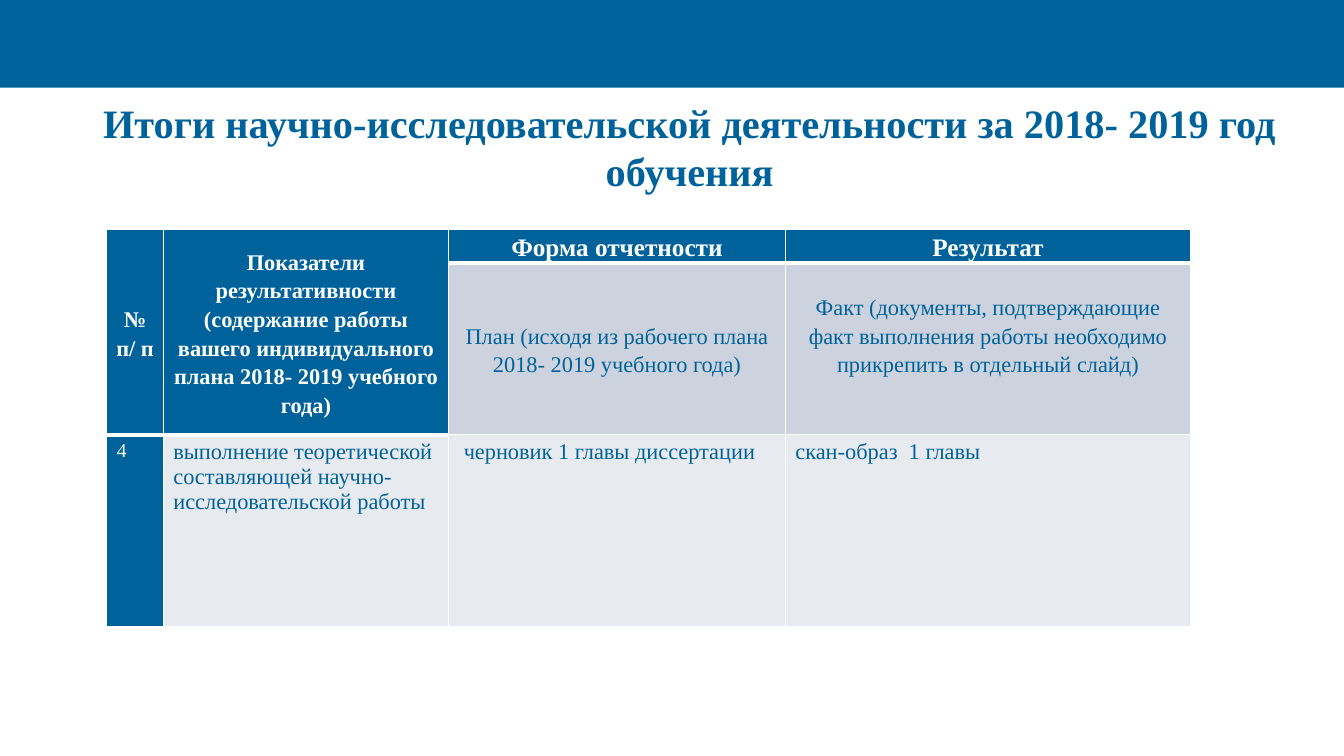
from lxml import etree
from pptx import Presentation
from pptx.dml.color import RGBColor
from pptx.enum.shapes import MSO_SHAPE
from pptx.enum.text import MSO_ANCHOR, PP_ALIGN
from pptx.oxml.ns import qn
from pptx.util import Inches, Pt

RECTANGLE = MSO_SHAPE.RECTANGLE
MIDDLE, TOP = MSO_ANCHOR.MIDDLE, MSO_ANCHOR.TOP
CENTER, LEFT = PP_ALIGN.CENTER, PP_ALIGN.LEFT

BLUE = RGBColor(0x00, 0x62, 0x9B)
WHITE = RGBColor(0xFF, 0xFF, 0xFF)
GREY = RGBColor(0xCC, 0xD3, 0xDE)
LIGHT_GREY = RGBColor(0xE7, 0xEA, 0xEF)

COLUMN_WIDTHS = (0.56, 2.83, 3.34, 4.02)
ROW_HEIGHTS = (0.33, 1.7, 1.9)
HEADER = {"fill": BLUE, "color": WHITE, "bold": True, "align": CENTER,
          "line_spacing": 1.15, "margins": (0.07, 0, 0.07, 0)}
SIDE_HEADER = {**HEADER, "anchor": MIDDLE}
SUBHEADER = {**SIDE_HEADER, "fill": GREY, "color": BLUE, "bold": False}
BODY = {"fill": LIGHT_GREY}

CELLS = (
    (0, 0, "№ п/ п", SIDE_HEADER),
    (0, 1, "Показатели результативности\n(содержание работы вашего "
           "индивидуального плана 2018- 2019 учебного года)", SIDE_HEADER),
    (0, 2, "Форма отчетности", {**HEADER, "size": 18}),
    (0, 3, "Результат", {**HEADER, "size": 18}),
    (1, 2, "План (исходя из рабочего плана 2018- 2019 учебного года)", SUBHEADER),
    (1, 3, "Факт (документы, подтверждающие факт выполнения работы необходимо "
           "прикрепить в отдельный слайд)",
     {**SUBHEADER, "margins": (0.07, 0, 0.07, 0.28)}),
    (2, 0, "4", {"fill": BLUE, "color": WHITE, "size": 14}),
    (2, 1, "выполнение теоретической составляющей научно-исследовательской работы",
     BODY),
    (2, 2, "черновик 1 главы диссертации", {**BODY, "margins": (0.15, 0.05, 0.1, 0.05)}),
    (2, 3, "скан-образ  1 главы", BODY),
)


def write_text(text_frame, text, size=16, color=BLUE, bold=False, align=LEFT,
               line_spacing=1.0):
    """Fill a text frame with formatted paragraphs."""
    text_frame.text = text
    text_frame.word_wrap = True
    for paragraph in text_frame.paragraphs:
        paragraph.alignment = align
        paragraph.line_spacing = line_spacing
        for run in paragraph.runs:
            run.font.name = "Times New Roman"
            run.font.size = Pt(size)
            run.font.bold = bold
            run.font.color.rgb = color


class SlideBuilder:
    """Hold the slide and its style, and add its elements."""

    def __init__(self, slide, accent):
        """Keep the slide and its accent colour."""
        self.slide = slide
        self.accent = accent

    def add_banner(self, width, height):
        """Draw the band along the top edge."""
        banner = self.slide.shapes.add_shape(
            RECTANGLE, 0, 0, Inches(width), Inches(height))
        banner.shadow.inherit = False
        banner.fill.solid()
        banner.fill.fore_color.rgb = self.accent
        banner.line.fill.background()

    def add_title(self, text, left, top, width, height):
        """Place and format the title."""
        title = self.slide.shapes.title
        title.left, title.top = Inches(left), Inches(top)
        title.width, title.height = Inches(width), Inches(height)
        title.text_frame.vertical_anchor = MIDDLE
        write_text(title.text_frame, text, size=28.8, color=self.accent,
                   bold=True, align=CENTER)

    def add_table(self, left, top):
        """Add the results table with its merged headers."""
        table = self.slide.shapes.add_table(
            len(ROW_HEIGHTS), len(COLUMN_WIDTHS), Inches(left), Inches(top),
            Inches(sum(COLUMN_WIDTHS)), Inches(sum(ROW_HEIGHTS))).table
        for column, width in zip(table.columns, COLUMN_WIDTHS):
            column.width = Inches(width)
        for row, height in zip(table.rows, ROW_HEIGHTS):
            row.height = Inches(height)
        for column in (0, 1):
            table.cell(0, column).merge(table.cell(1, column))
        for row, column, text, style in CELLS:
            self.format_cell(table.cell(row, column), row, column, text, **style)

    def format_cell(self, cell, row, column, text, fill, anchor=TOP,
                    margins=(0.1, 0.05, 0.1, 0.05), **text_format):
        """Set the borders, fill, margins and text of a cell."""
        header_edge = 2 if column < 2 else 1
        bottom_edge = row + (2 if cell.is_merge_origin else 1)
        top_width = 3 if row == header_edge else 1
        bottom_width = 3 if bottom_edge == header_edge else 1
        for side, width in (("L", 1), ("R", 1), ("T", top_width), ("B", bottom_width)):
            self.add_border(cell, side, width)
        cell.fill.solid()
        cell.fill.fore_color.rgb = fill
        cell.vertical_anchor = anchor
        (cell.margin_left, cell.margin_top,
         cell.margin_right, cell.margin_bottom) = map(Inches, margins)
        write_text(cell.text_frame, text, **text_format)

    def add_border(self, cell, side, width):
        """Add a white border to one side of a cell."""
        properties = cell._tc.get_or_add_tcPr()
        line = etree.SubElement(properties, qn(f"a:ln{side}"), w=str(Pt(width)))
        solid_fill = etree.SubElement(line, qn("a:solidFill"))
        etree.SubElement(solid_fill, qn("a:srgbClr"), val=str(WHITE))


def main():
    """Build and save the presentation."""
    presentation = Presentation()
    presentation.slide_width = Inches(13.33)
    presentation.slide_height = Inches(7.5)
    slide = presentation.slides.add_slide(presentation.slide_layouts[5])
    builder = SlideBuilder(slide, BLUE)
    builder.add_banner(13.33, 0.87)
    builder.add_title("Итоги научно-исследовательской деятельности за 2018- 2019 "
                      "год обучения", 0.84, 1, 12, 0.9)
    builder.add_table(1.06, 2.28)
    presentation.save("out.pptx")


if __name__ == "__main__":
    main()
